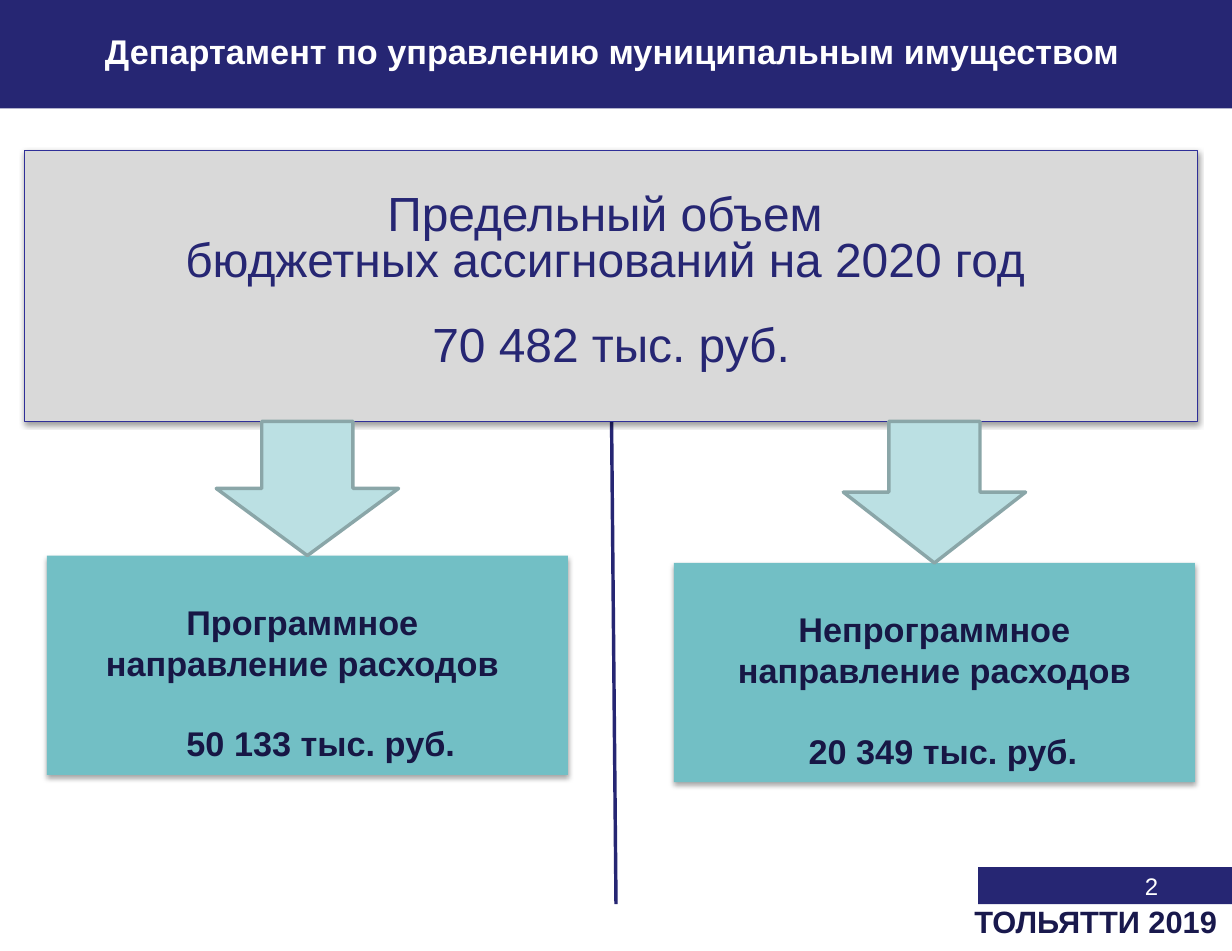
import pptx
import pptx.util
import pptx.oxml
import pptx.oxml.ns
import pptx.dml.color
import pptx.enum.shapes
import pptx.enum.text

Inches = pptx.util.Inches
Pt = pptx.util.Pt
SHAPE = pptx.enum.shapes.MSO_SHAPE
ALIGN = pptx.enum.text.PP_ALIGN
ANCHOR = pptx.enum.text.MSO_ANCHOR
NAVY = "262673"
TEAL = "72BFC5"


def rgb(color):
    return pptx.dml.color.RGBColor.from_string(color)


def set_effects(sp, content=""):
    ns = pptx.oxml.ns.nsdecls("a")
    sp._element.spPr.append(pptx.oxml.parse_xml(
        f"<a:effectLst {ns}>{content}</a:effectLst>"))


def add_shadow(sp, opacity, distance):
    set_effects(sp, (
        f'<a:outerShdw blurRad="{Pt(3.1)}" dist="{Pt(distance)}" '
        'dir="5400000" rotWithShape="0"><a:srgbClr val="000000">'
        f'<a:alpha val="{opacity * 1000}"/></a:srgbClr></a:outerShdw>'))


def add_block(s, kind, box, fill, line=None, width=0.75, shadow=None):
    sp = s.shapes.add_shape(kind, *map(Inches, box))
    sp.fill.solid()
    sp.fill.fore_color.rgb = rgb(fill)
    if line:
        sp.line.color.rgb = rgb(line)
        sp.line.width = Pt(width)
    else:
        sp.line.fill.background()
    if shadow:
        add_shadow(sp, *shadow)
    else:
        sp.shadow.inherit = False
    return sp


def write(sp, lines, size, color, bold=False, align=ALIGN.CENTER,
          top=0.05, anchor=ANCHOR.TOP, spacing=1.0):
    tf = sp.text_frame
    tf.word_wrap = True
    tf.margin_top = Inches(top)
    tf.vertical_anchor = anchor
    for i, (text, shift, before) in enumerate(lines):
        p = tf.add_paragraph() if i else tf.paragraphs[0]
        p.text = text
        p.alignment = align
        p.line_spacing = spacing
        if before:
            p.space_before = Pt(before)
        if shift:
            side = "marL" if shift > 0 else "marR"
            p._p.get_or_add_pPr().set(side, str(Inches(2 * abs(shift))))
        p.font.name = "Arial"
        p.font.size = Pt(size)
        p.font.bold = bold
        p.font.color.rgb = rgb(color)


def add_label(s, box, text, size, color, **style):
    sp = s.shapes.add_textbox(*map(Inches, box))
    write(sp, [(text, 0, 0)], size, color, **style)


def add_divider(s, start, end):
    line = s.shapes.add_connector(
        pptx.enum.shapes.MSO_CONNECTOR.STRAIGHT, *map(Inches, start + end))
    line.line.color.rgb = rgb(NAVY)
    line.line.width = Pt(2)
    set_effects(line)


def add_direction(s, left, top, lines):
    width, arrow_width, total_bottom = 4.23, 1.48, 3.42
    sp = add_block(s, SHAPE.RECTANGLE, (left, top, width, 1.78), TEAL,
                   shadow=(35, 1.8))
    write(sp, lines, 20, "171745", bold=True, top=0.37)
    arrow_left = left + (width - arrow_width) / 2
    add_block(s, SHAPE.DOWN_ARROW,
              (arrow_left, total_bottom, arrow_width, top - total_bottom),
              "BBE0E3", "8AA6A8", 2)


def main():
    prs = pptx.Presentation()
    prs.slide_width, prs.slide_height = Inches(10), Inches(7.72)
    s = prs.slides.add_slide(prs.slide_layouts[6])

    add_block(s, SHAPE.RECTANGLE, (7.94, 7.04, 2.06, 0.3), NAVY)
    add_label(s, (7.17, 7.03, 2.33, 0.54), "2", 14, "FFFFFF",
              align=ALIGN.RIGHT)
    add_label(s, (7.81, 7.34, 2.21, 0.35), "ТОЛЬЯТТИ 2019", 18, "19194D",
              bold=True, align=ALIGN.LEFT, spacing=0.8)

    header = add_block(s, SHAPE.RECTANGLE, (0, 0, 10, 0.88), NAVY)
    write(header, [("Департамент по управлению муниципальным имуществом",
                    -0.03, 0)],
          20, "FFFFFF", bold=True, anchor=ANCHOR.MIDDLE, spacing=0.8)

    add_divider(s, (4.96, 2.96), (5, 7.34))
    total = add_block(s, SHAPE.RECTANGLE, (0.2, 1.22, 9.52, 2.2), "D9D9D9",
                      "2F2F98", shadow=(38, 1.6))
    write(total, [("Предельный объем", -0.05, 0),
                  ("бюджетных ассигнований на 2020 год", 0, 0),
                  ("70 482 тыс. руб.", 0.05, 23)],
          28, NAVY, top=0.36, spacing=0.8)

    add_direction(s, 0.38, 4.51, [("Программное", -0.04, 0),
                                  ("направление расходов", -0.04, 0),
                                  ("50 133 тыс. руб.", 0.15, 23)])
    add_direction(s, 5.47, 4.57, [("Непрограммное направление расходов", 0, 0),
                                  ("20 349 тыс. руб.", 0.07, 23)])
    prs.save("out.pptx")


if __name__ == "__main__":
    main()
